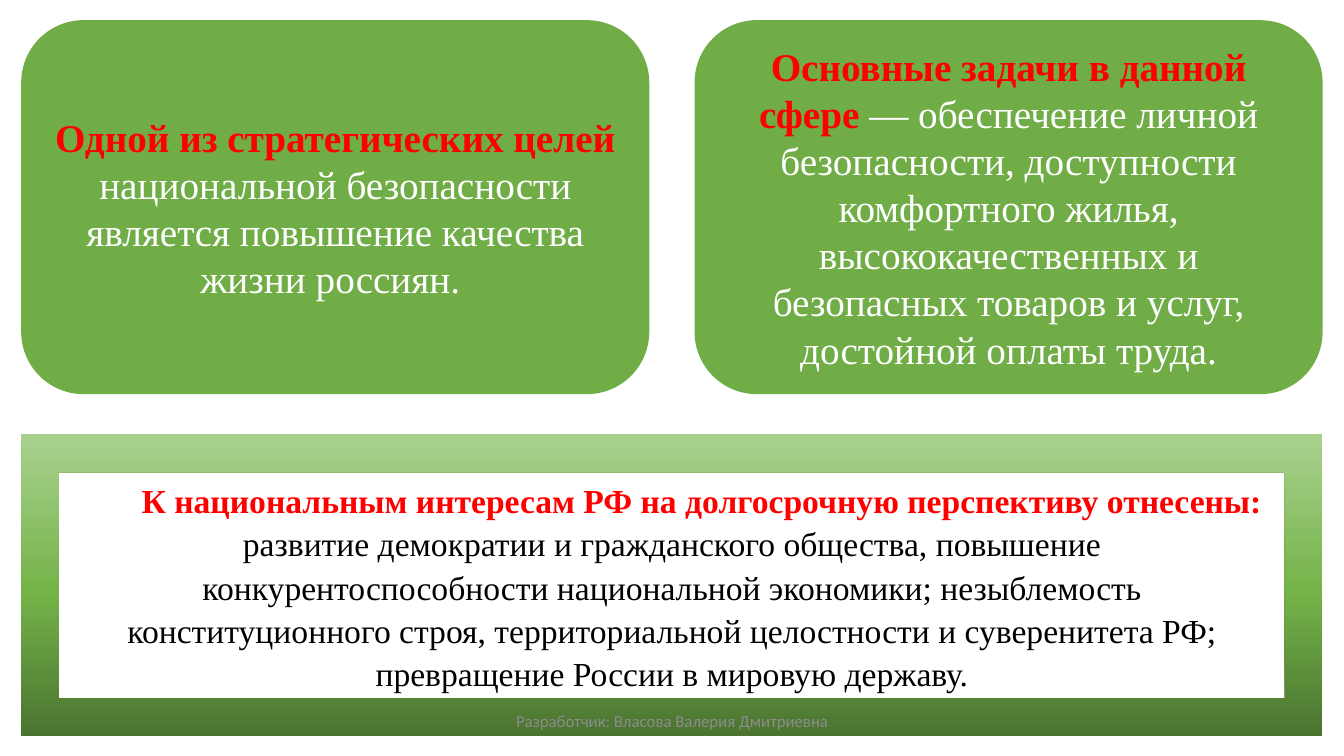
from copy import deepcopy
from dataclasses import dataclass
from typing import Optional

from pptx import Presentation
from pptx.dml.color import RGBColor
from pptx.enum.shapes import MSO_SHAPE
from pptx.enum.text import MSO_ANCHOR, PP_ALIGN
from pptx.oxml.ns import qn
from pptx.util import Inches, Pt

COLORS = {
    "card": "70AD47",
    "accent": "FF0000",
    "light": "FFFFFF",
    "dark": "000000",
    "footer": "8C8C8C",
}
FRAME_STOPS = [(0, "4B7430"), (0.48, "74B349"), (1, "A9D18E")]
SERIF = "Times New Roman"

LEFT, TOP, WIDTH = 1.58, 2.67, 96.83
GUTTER, CARD_HEIGHT = 4.95 - LEFT, 49.47
CARD_WIDTH = (WIDTH - GUTTER) / 2


@dataclass
class Span:
    text: str
    color: str
    size: int
    bold: bool = False
    font: str = SERIF


@dataclass
class Block:
    box: tuple[float, float, float, float]
    spans: list[Span]
    preset: Optional[MSO_SHAPE] = None
    paragraph: Optional[dict] = None
    indent: float = 0


CARDS = [
    ("Одной из стратегических целей ",
     "национальной безопасности является повышение качества жизни россиян. "),
    ("Основные задачи в данной сфере ",
     "— обеспечение личной безопасности, доступности комфортного жилья, "
     "высококачественных и безопасных товаров и услуг, достойной оплаты труда."),
]
INTERESTS = Block(
    (LEFT, 57.47, WIDTH, 39.87),
    [Span("К национальным интересам РФ на долгосрочную перспективу отнесены: ",
          "accent", 24, True),
     Span("развитие демократии и гражданского общества, повышение "
          "конкурентоспособности национальной экономики; незыблемость "
          "конституционного строя, территориальной целостности и суверенитета РФ; "
          "превращение России в мировую державу.", "dark", 24)],
    MSO_SHAPE.FRAME,
    {"line_spacing": 1.07, "space_after": Pt(8)},
    0.59,
)
FOOTER = Block(
    (33.15, 92.67, 33.75, 5.33),
    [Span("Разработчик: Власова Валерия Дмитриевна", "footer", 12, font="Calibri")],
)


def rgb(name: str) -> RGBColor:
    return RGBColor.from_string(COLORS[name])


def fill_frame(sp) -> None:
    sp.fill.gradient()
    sp.fill.gradient_angle = 90
    stops = sp._element.spPr.find(qn("a:gradFill")).find(qn("a:gsLst"))
    stops.insert(1, deepcopy(stops[0]))
    for stop, (position, color) in zip(sp.fill.gradient_stops, FRAME_STOPS):
        stop.position = position
        stop.color.rgb = RGBColor.from_string(color)


def write_text(sp, block: Block) -> None:
    tf = sp.text_frame
    tf.word_wrap = True
    tf.vertical_anchor = MSO_ANCHOR.MIDDLE
    p = tf.paragraphs[0]
    for name, value in {"alignment": PP_ALIGN.CENTER, **(block.paragraph or {})}.items():
        setattr(p, name, value)
    if block.indent:
        p._p.get_or_add_pPr().set("indent", str(Inches(block.indent)))
    for span in block.spans:
        r = p.add_run()
        r.text = span.text
        r.font.color.rgb = rgb(span.color)
        for name, value in {"name": span.font, "size": Pt(span.size),
                            "bold": span.bold}.items():
            setattr(r.font, name, value)


def draw_block(prs, s, block: Block) -> None:
    x, y, w, h = block.box
    box = (int(prs.slide_width * x / 100), int(prs.slide_height * y / 100),
           int(prs.slide_width * w / 100), int(prs.slide_height * h / 100))
    if block.preset is None:
        sp = s.shapes.add_textbox(*box)
    else:
        sp = s.shapes.add_shape(block.preset, *box)
        sp.shadow.inherit = False
        sp.line.fill.background()
        if block.preset == MSO_SHAPE.FRAME:
            fill_frame(sp)
        else:
            sp.fill.solid()
            sp.fill.fore_color.rgb = rgb("card")
    write_text(sp, block)


def main() -> None:
    prs = Presentation()
    prs.slide_width, prs.slide_height = Inches(13.33), Inches(7.5)
    s = prs.slides.add_slide(prs.slide_layouts[6])
    cards = [
        Block((LEFT + i * (CARD_WIDTH + GUTTER), TOP, CARD_WIDTH, CARD_HEIGHT),
              [Span(lead, "accent", 28, True), Span(body, "light", 28)],
              MSO_SHAPE.ROUNDED_RECTANGLE)
        for i, (lead, body) in enumerate(CARDS)
    ]
    for block in [*cards, INTERESTS, FOOTER]:
        draw_block(prs, s, block)
    prs.save("out.pptx")


if __name__ == "__main__":
    main()
